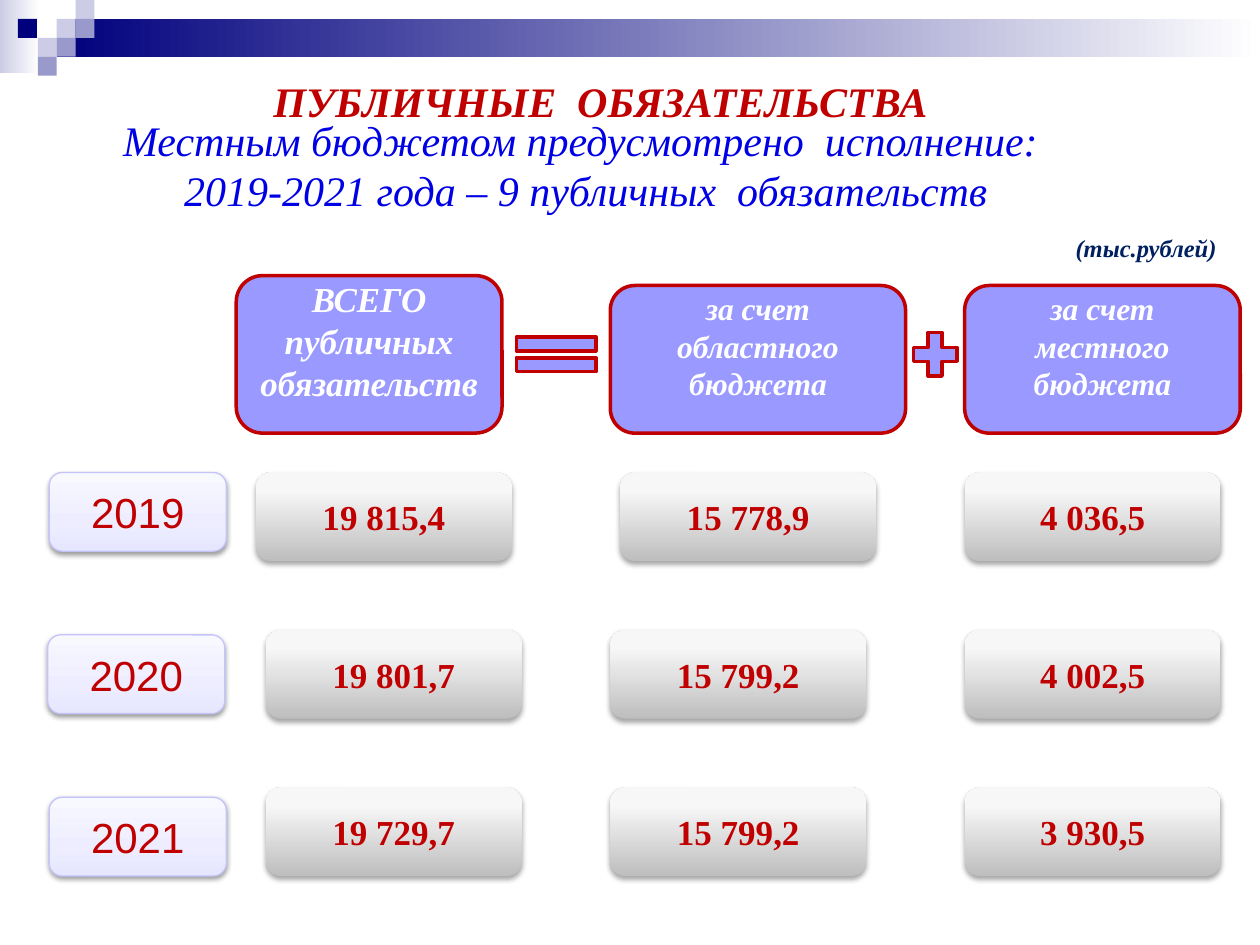
from dataclasses import dataclass

from lxml.etree import SubElement
from pptx import Presentation
from pptx.dml.color import RGBColor
from pptx.enum.shapes import MSO_SHAPE
from pptx.enum.text import MSO_ANCHOR, PP_ALIGN
from pptx.oxml import parse_xml
from pptx.oxml.ns import nsdecls, qn
from pptx.util import Inches, Pt

# The slide is a grid of 128 columns by 96 rows of square cells
CELL = Inches(10) / 128
TILE = 1.92  # side of a corner square, in cells

WHITE = RGBColor(0xFF, 0xFF, 0xFF)
RED = RGBColor(0xC0, 0x00, 0x00)
BLUE = RGBColor(0x00, 0x00, 0xE4)
DARK_BLUE = RGBColor(0x00, 0x20, 0x60)
NAVY = RGBColor(0x00, 0x00, 0x7D)
PALE = RGBColor(0xCC, 0xCC, 0xE6)
LILAC = RGBColor(0x99, 0x99, 0xCC)
VIOLET = RGBColor(0x99, 0x99, 0xFF)
YEAR_EDGE = RGBColor(0xC4, 0xC4, 0xFB)
GREY_STOPS = ((0, RGBColor(0xBE, 0xBE, 0xBE)), (80, RGBColor(0xF7, 0xF7, 0xF7)),
              (100, RGBColor(0xF8, 0xF8, 0xF8)))
YEAR_STOPS = ((0, RGBColor(0xE6, 0xE6, 0xFF)), (35, RGBColor(0xED, 0xED, 0xFF)),
              (100, RGBColor(0xF8, 0xF8, 0xFF)))
SERIF = "Times New Roman"


@dataclass(frozen=True)
class Area:
    column: float
    row: float
    columns: float
    rows: float

    def lengths(self) -> list[int]:
        return [round(n * CELL) for n in (self.column, self.row, self.columns, self.rows)]


@dataclass(frozen=True)
class Style:
    size: float
    color: RGBColor
    name: str = SERIF
    bold: bool = False
    italic: bool = False


@dataclass(frozen=True)
class Header:
    area: Area
    lines: tuple[str, ...]
    size: float


@dataclass(frozen=True)
class YearRow:
    year: str
    year_column: float
    value_columns: tuple[float, ...]
    values: tuple[str, ...]


HEADERS = (
    Header(Area(62, 29, 30, 15), ("за счет областного бюджета",), 18),
    Header(Area(24, 28, 27, 16), ("ВСЕГО", "публичных", "обязательств"), 20),
    Header(Area(98, 29, 28, 15), ("за счет местного", "бюджета"), 18),
)
YEAR_ROWS = (
    YearRow("2019", 5, (26, 63, 98), ("19 815,4", "15 778,9", "4 036,5")),
    YearRow("2020", 4.85, (27, 62, 98), ("19 801,7", "15 799,2", "4 002,5")),
    YearRow("2021", 5, (27, 62, 98), ("19 729,7", "15 799,2", "3 930,5")),
)
SQUARES = ((3, 1, PALE), (4, 0, PALE), (4, 1, LILAC), (2, 2, PALE),
           (0.95, 1, NAVY), (3, 2, LILAC), (2, 3, LILAC))


def write(shape, lines: tuple[str, ...], style: Style, align=PP_ALIGN.CENTER) -> None:
    frame = shape.text_frame
    for index, line in enumerate(lines):
        para = frame.add_paragraph() if index else frame.paragraphs[0]
        para.text = line
        para.alignment = align
        font = para.font
        font.name, font.size = style.name, Pt(style.size)
        font.bold, font.italic = style.bold, style.italic
        font.color.rgb = style.color


def add_text(page, area: Area, lines: tuple[str, ...], style: Style,
             align=PP_ALIGN.CENTER, wrap: bool = True) -> None:
    box = page.shapes.add_textbox(*area.lengths())
    box.text_frame.word_wrap = wrap
    write(box, lines, style, align)


def add_block(page, kind, area: Area, fill: RGBColor | None = None,
              edge: RGBColor | None = None, width: float = 2):
    block = page.shapes.add_shape(kind, *area.lengths())
    block.shadow.inherit = False
    if fill is None:
        block.fill.background()
    else:
        block.fill.solid()
        block.fill.fore_color.rgb = fill
    if edge is None:
        block.line.fill.background()
    else:
        block.line.color.rgb = edge
        block.line.width = Pt(width)
    block.text_frame.word_wrap = True
    block.text_frame.vertical_anchor = MSO_ANCHOR.MIDDLE
    return block


def set_gradient(block, stops, angle: int) -> None:
    marks = "".join(f'<a:gs pos="{place * 1000}"><a:srgbClr val="{color}"/></a:gs>'
                    for place, color in stops)
    gradient = parse_xml(f'<a:gradFill {nsdecls("a")} rotWithShape="1"><a:gsLst>{marks}</a:gsLst>'
                         f'<a:lin ang="{angle * 60000}" scaled="0"/></a:gradFill>')
    properties = block.element.spPr
    properties.replace(properties.find(qn("a:noFill")), gradient)


def set_shadow(block, opacity: int, distance: float) -> None:
    effects = block.element.spPr.find(qn("a:effectLst"))
    shadow = SubElement(effects, qn("a:outerShdw"), blurRad=str(Pt(3.1)), dist=str(Pt(distance)),
                        dir="5400000", rotWithShape="0")
    color = SubElement(shadow, qn("a:srgbClr"), val="000000")
    SubElement(color, qn("a:alpha"), val=str(opacity * 1000))


def add_band(page) -> None:
    for area, color in ((Area(0, 0, 4, 7.4), PALE),
                        (Area(3 * TILE, TILE, 128 - 3 * TILE, 2 * TILE), NAVY)):
        band = add_block(page, MSO_SHAPE.RECTANGLE, area)
        set_gradient(band, ((0, color), (100, WHITE)), 0)
    for column, row, color in SQUARES:
        add_block(page, MSO_SHAPE.RECTANGLE, Area(column * TILE, row * TILE, TILE, TILE), color)


def add_header(page, header: Header) -> None:
    block = add_block(page, MSO_SHAPE.ROUNDED_RECTANGLE, header.area, VIOLET, RED)
    block.text_frame.margin_bottom = Inches(0.27)  # lifts the text above the middle
    write(block, header.lines, Style(header.size, WHITE, bold=True, italic=True))


def add_year_row(page, index: int, entry: YearRow) -> None:
    label = add_block(page, MSO_SHAPE.ROUNDED_RECTANGLE,
                      Area(entry.year_column, 48 + 16.5 * index, 18, 8), edge=YEAR_EDGE, width=0.75)
    set_gradient(label, YEAR_STOPS, 270)
    set_shadow(label, 38, 1.6)
    write(label, (entry.year,), Style(24, RED, "Arial"))
    for column, value in zip(entry.value_columns, entry.values):
        card = add_block(page, MSO_SHAPE.ROUNDED_RECTANGLE, Area(column, 48 + 16 * index, 26, 9))
        set_gradient(card, GREY_STOPS, 270)
        set_shadow(card, 35, 1.8)
        write(card, (value,), Style(20, RED, bold=True))


def main() -> None:
    deck = Presentation()
    deck.slide_width, deck.slide_height = Inches(10), Inches(7.5)
    page = deck.slides.add_slide(deck.slide_layouts[6])

    add_band(page)

    # Title, subtitle and unit note
    add_text(page, Area(11, 7, 100, 6.4), ("ПУБЛИЧНЫЕ  ОБЯЗАТЕЛЬСТВА",),
             Style(24, RED, bold=True, italic=True))
    add_text(page, Area(2, 11, 115, 11.6),
             ("Местным бюджетом предусмотрено  исполнение: ",
              "2019-2021 года – 9 публичных  обязательств"), Style(24, BLUE, italic=True))
    add_text(page, Area(108, 23, 17, 4.3), ("(тыс.рублей)",),
             Style(14, DARK_BLUE, bold=True, italic=True), PP_ALIGN.LEFT, wrap=False)

    # Total = regional share + local share
    for header in HEADERS:
        add_header(page, header)
    add_block(page, MSO_SHAPE.MATH_EQUAL, Area(51, 33, 11, 6), VIOLET, RED)
    add_block(page, MSO_SHAPE.MATH_PLUS, Area(92, 33, 6, 6), VIOLET, RED)

    # Amounts by year
    for index, entry in enumerate(YEAR_ROWS):
        add_year_row(page, index, entry)

    deck.save("out.pptx")


if __name__ == "__main__":
    main()
